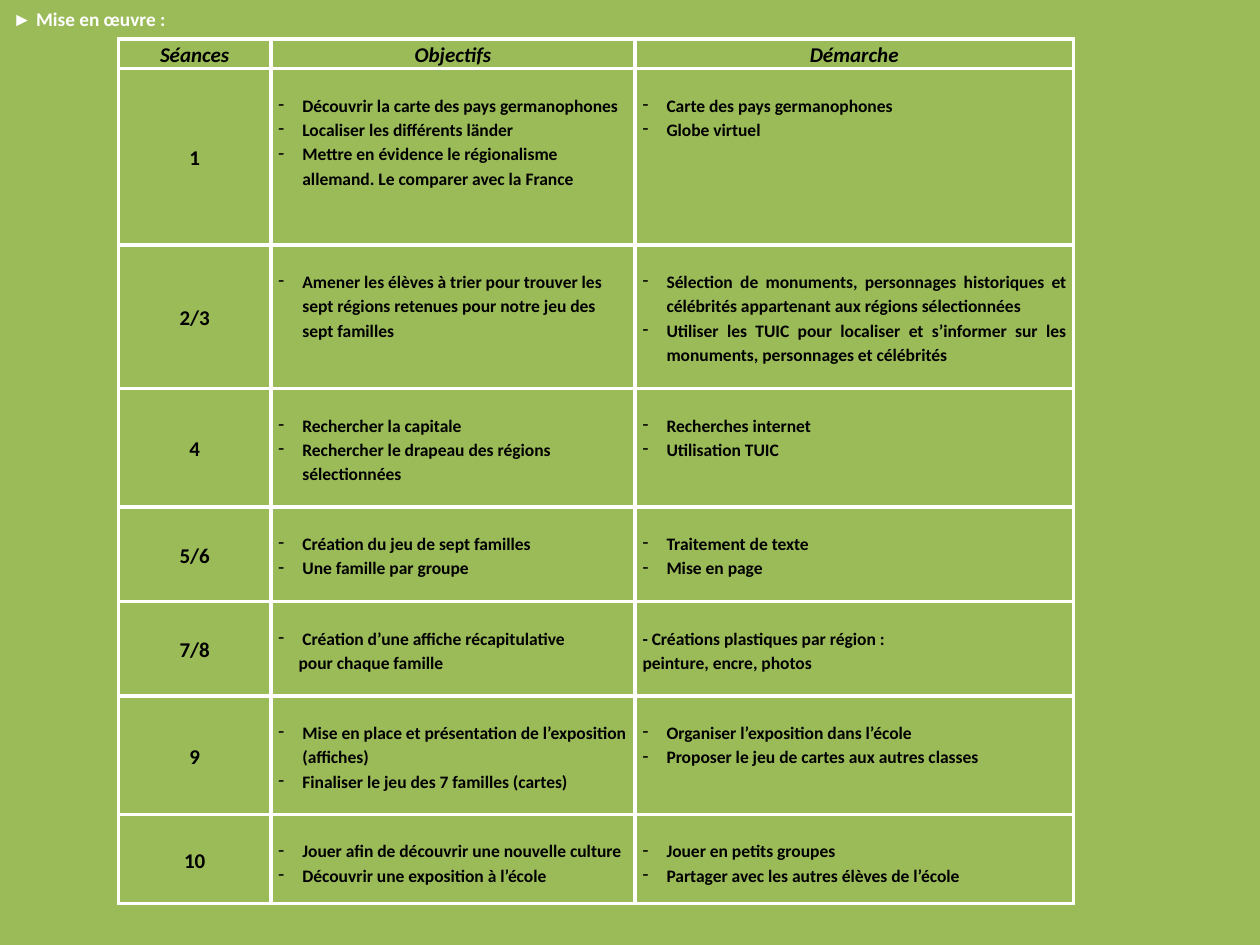
import pptx
import pptx.util
import pptx.dml.color
import pptx.enum.text
import pptx.oxml
import pptx.oxml.ns
from lxml import etree

Inches = pptx.util.Inches
Pt = pptx.util.Pt
ALIGN = pptx.enum.text.PP_ALIGN
ANCHOR = pptx.enum.text.MSO_ANCHOR

COLORS = {"background": "9BBB59", "line": "FFFFFF", "heading": "FFFFFF", "text": "000000"}

HEADERS = ["Séances", "Objectifs", "Démarche"]
COLUMN_WIDTHS = [1.21, 2.89, 3.48]
HEADER_HEIGHT = 0.23
HANGING_INDENT = 0.19
BLOCK_TOP = 0.19  # space above the text of each session

# Each session: number, row height, objectives, approach.
# A line is bulleted unless it is a pair (text, left indent).
SESSIONS = [
    ("1", 1.4,
     ["Découvrir la carte des pays germanophones",
      "Localiser les différents länder",
      "Mettre en évidence le régionalisme allemand. Le comparer avec la France"],
     ["Carte des pays germanophones", "Globe virtuel"]),
    ("2/3", 1.14,
     ["Amener les élèves à trier pour trouver les sept régions retenues "
      "pour notre jeu des sept familles"],
     ["Sélection de monuments, personnages historiques et célébrités "
      "appartenant aux régions sélectionnées",
      "Utiliser les TUIC pour localiser et s’informer sur les monuments, "
      "personnages et célébrités"]),
    ("4", 0.94,
     ["Rechercher la capitale", "Rechercher le drapeau des régions sélectionnées"],
     ["Recherches internet", "Utilisation TUIC"]),
    ("5/6", 0.75,
     ["Création du jeu de sept familles", "Une famille par groupe"],
     ["Traitement de texte", "Mise en page"]),
    ("7/8", 0.75,
     ["Création d’une affiche récapitulative", ("pour chaque famille", 0.16)],
     [("- Créations plastiques par région :", 0), ("peinture, encre, photos", 0)]),
    ("9", 0.94,
     ["Mise en place et présentation de l’exposition (affiches)",
      "Finaliser le jeu des 7 familles (cartes)"],
     ["Organiser l’exposition dans l’école",
      "Proposer le jeu de cartes aux autres classes"]),
    ("10", 0.71,
     ["Jouer afin de découvrir une nouvelle culture", "Découvrir une exposition à l’école"],
     ["Jouer en petits groupes", "Partager avec les autres élèves de l’école"]),
]


def color(name):
    return pptx.dml.color.RGBColor.from_string(COLORS[name])


def add_run(paragraph, text, size, color_name, font="Calibri", italic=False):
    run = paragraph.add_run()
    run.text = text
    run.font.name = font
    run.font.size = Pt(size)
    run.font.bold = True
    run.font.italic = italic
    run.font.color.rgb = color(color_name)


def set_indent(paragraph, left, bulleted):
    properties = paragraph._p.get_or_add_pPr()
    properties.set("marL", str(Inches(left)))
    properties.set("indent", str(Inches(-left if bulleted else 0)))
    if bulleted:
        bullet = etree.SubElement(properties, pptx.oxml.ns.qn("a:buChar"))
        bullet.set("char", "-")


def format_cell(cell, top=0, anchor=ANCHOR.TOP):
    cell.margin_left = cell.margin_right = Inches(0.06)
    cell.margin_top, cell.margin_bottom = Inches(top), 0
    cell.vertical_anchor = anchor
    properties = cell._tc.get_or_add_tcPr()
    for side in ("lnL", "lnR", "lnT", "lnB"):
        properties.append(pptx.oxml.parse_xml(
            f'<a:{side} {pptx.oxml.ns.nsdecls("a")} w="{Pt(2.25)}"><a:solidFill>'
            f'<a:srgbClr val="{COLORS["line"]}"/></a:solidFill></a:{side}>'))
    cell.fill.background()


def fill_label(cell, text, italic=False):
    format_cell(cell, anchor=ANCHOR.TOP if italic else ANCHOR.MIDDLE)
    paragraph = cell.text_frame.paragraphs[0]
    paragraph.alignment = ALIGN.CENTER
    paragraph.line_spacing = 1.15
    add_run(paragraph, text, 12, "text", italic=italic)


def fill_lines(cell, lines, alignment):
    format_cell(cell, top=BLOCK_TOP)
    frame = cell.text_frame
    for index, line in enumerate(lines):
        paragraph = frame.add_paragraph() if index else frame.paragraphs[0]
        paragraph.alignment = alignment
        paragraph.line_spacing = 1.15
        bulleted = isinstance(line, str)
        text, left = (line, HANGING_INDENT) if bulleted else line
        set_indent(paragraph, left, bulleted)
        add_run(paragraph, text, 10, "text")


def add_heading(slide, left, top, width, height):
    title = slide.shapes.title
    title.left, title.top = Inches(left), Inches(top)
    title.width, title.height = Inches(width), Inches(height)
    frame = title.text_frame
    frame.auto_size = pptx.enum.text.MSO_AUTO_SIZE.NONE
    frame.word_wrap = False
    frame.vertical_anchor = ANCHOR.MIDDLE
    paragraph = frame.paragraphs[0]
    paragraph.alignment = ALIGN.LEFT
    add_run(paragraph, "►", 11, "heading", font="Arial")
    add_run(paragraph, " Mise en œuvre :", 11, "heading")


def add_sessions_table(slide, left, top):
    heights = [HEADER_HEIGHT] + [session[1] for session in SESSIONS]
    table = slide.shapes.add_table(
        len(heights), len(COLUMN_WIDTHS), Inches(left), Inches(top),
        Inches(sum(COLUMN_WIDTHS)), Inches(sum(heights))).table
    table.first_row = table.horz_banding = False
    for column, width in zip(table.columns, COLUMN_WIDTHS):
        column.width = Inches(width)
    for row, height in zip(table.rows, heights):
        row.height = Inches(height)

    # Header row
    for index, header in enumerate(HEADERS):
        fill_label(table.cell(0, index), header, italic=True)

    # One row per session
    for index, (number, _, objectives, approach) in enumerate(SESSIONS, start=1):
        fill_label(table.cell(index, 0), number)
        fill_lines(table.cell(index, 1), objectives, ALIGN.LEFT)
        fill_lines(table.cell(index, 2), approach, ALIGN.JUSTIFY)


def main():
    presentation = pptx.Presentation()
    presentation.slide_width, presentation.slide_height = Inches(10), Inches(7.5)
    slide = presentation.slides.add_slide(presentation.slide_layouts[5])
    slide.background.fill.solid()
    slide.background.fill.fore_color.rgb = color("background")
    add_heading(slide, 0, 0, 1.43, 0.3)
    add_sessions_table(slide, 0.94, 0.31)
    presentation.save("out.pptx")


if __name__ == "__main__":
    main()
